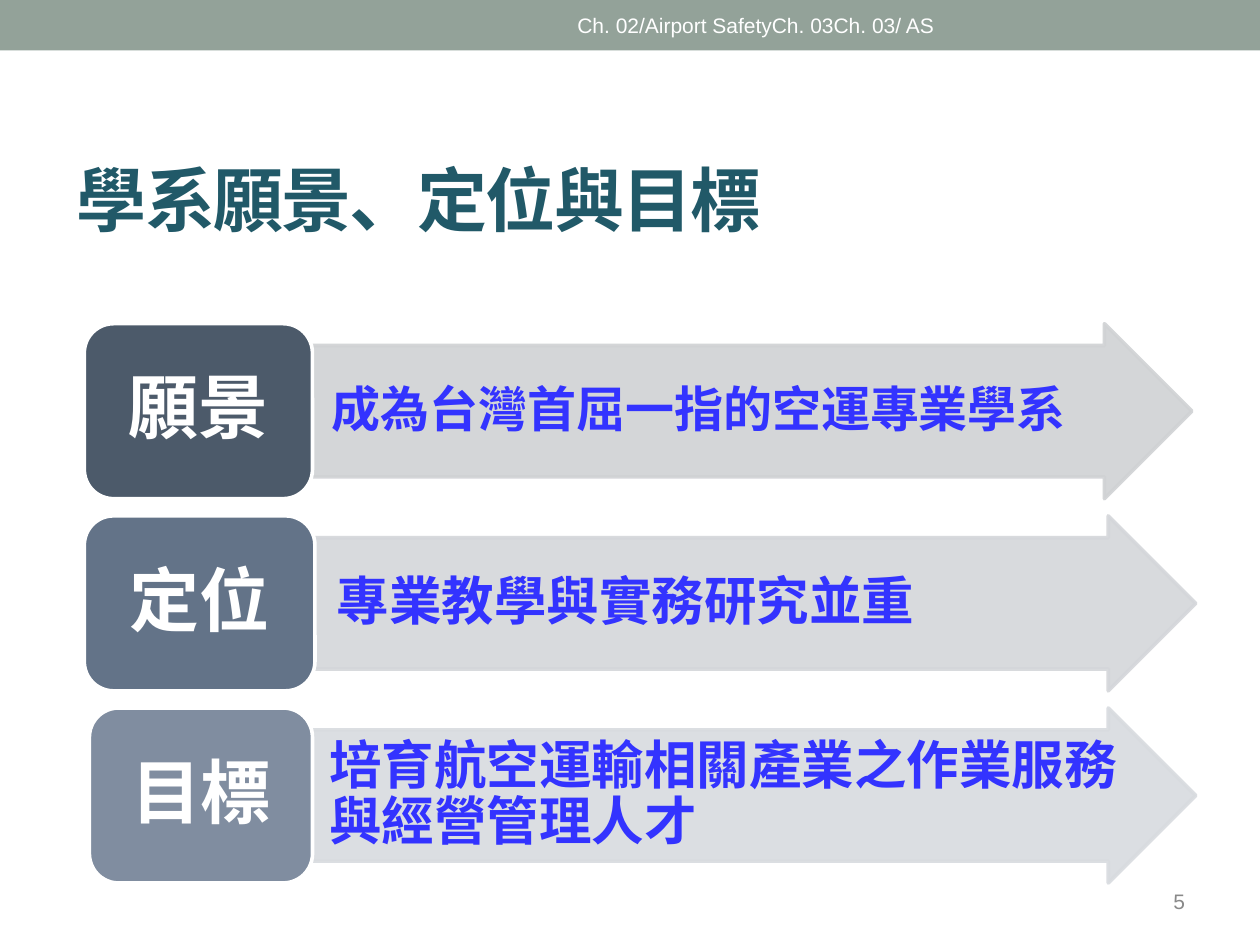
from dataclasses import dataclass

from lxml.etree import SubElement
from pptx import Presentation
from pptx.dml.color import RGBColor
from pptx.enum.shapes import MSO_SHAPE
from pptx.enum.text import MSO_ANCHOR, MSO_AUTO_SIZE, PP_ALIGN
from pptx.oxml.ns import qn
from pptx.util import Pt

LATIN_FONT = "Arial"
CHINESE_FONT = "Noto Sans CJK SC"
WHITE = "FFFFFF"
ROW_TOP, ROW_PITCH, ROW_HEIGHT = 185, 109.8, 100


@dataclass
class Row:
    label: str
    label_left: float
    label_right: float
    label_color: str
    statement: str
    statement_size: float
    arrow_left: float
    arrow_right: float
    arrow_color: str


ROWS = [
    Row("願景", 48.2, 178.6, "4C5A6A",
        "成為台灣首屈一指的空運專業學系", 28, 165.6, 681.1, "D0D2D4"),
    Row("定位", 48.2, 180, "637388",
        "專業教學與實務研究並重", 30, 168.5, 683.3, "D4D6DA"),
    Row("目標", 51.1, 178.6, "808DA0",
        "培育航空運輸相關產業之作業服務與經營管理人才", 30, 164.2, 683.3, "D8DBDF"),
]


def rgb(color: str) -> RGBColor:
    return RGBColor.from_string(color)


def write(box, text: str, size: float, color: str, align: PP_ALIGN,
          font: str = CHINESE_FONT, bold: bool = True,
          insets: tuple = (7.2, 3.6, 7.2, 3.6)):
    """Put one formatted paragraph into a shape; insets are left, top, right, bottom."""
    frame = box.text_frame
    frame.word_wrap = True
    frame.auto_size = MSO_AUTO_SIZE.NONE
    frame.vertical_anchor = MSO_ANCHOR.MIDDLE
    (frame.margin_left, frame.margin_top,
     frame.margin_right, frame.margin_bottom) = map(Pt, insets)
    para = frame.paragraphs[0]
    para.alignment = align
    span = para.add_run()
    span.text = text
    span.font.size = Pt(size)
    span.font.bold = bold
    span.font.name = font
    span.font.color.rgb = rgb(color)
    SubElement(span.font._element, qn("a:ea"), typeface=font)
    return para


def add_block(page, kind: MSO_SHAPE, left: float, top: float, width: float,
              height: float, fill: str, line: str | None = None):
    block = page.shapes.add_shape(kind, Pt(left), Pt(top), Pt(width), Pt(height))
    block.shadow.inherit = False
    block.fill.solid()
    block.fill.fore_color.rgb = rgb(fill)
    if line:
        block.line.color.rgb = rgb(line)
        block.line.width = Pt(2.08)
    else:
        block.line.fill.background()
    return block


def add_caption(page, left: float, top: float, width: float, height: float,
                text: str, color: str, align: PP_ALIGN) -> None:
    box = page.shapes.add_textbox(Pt(left), Pt(top), Pt(width), Pt(height))
    write(box, text, 12, color, align, LATIN_FONT, bold=False)


def add_row(page, row: Row, top: float) -> None:
    arrow = add_block(page, MSO_SHAPE.RIGHT_ARROW, row.arrow_left, top,
                      row.arrow_right - row.arrow_left, ROW_HEIGHT,
                      row.arrow_color, row.arrow_color)
    arrow.adjustments[0] = 0.75
    arrow.adjustments[1] = 0.5
    for color in arrow._element.spPr.iter(qn("a:srgbClr")):
        SubElement(color, qn("a:alpha"), val="90000")
    para = write(arrow, row.statement, row.statement_size, "3333FF",
                 PP_ALIGN.LEFT, insets=(24, 1.4, 0, 1.4))
    para.line_spacing = 0.9

    label = add_block(page, MSO_SHAPE.ROUNDED_RECTANGLE, row.label_left, top,
                      row.label_right - row.label_left, ROW_HEIGHT,
                      row.label_color, WHITE)
    para = write(label, row.label, 40, WHITE, PP_ALIGN.CENTER,
                 insets=(12, 6, 12, 6))
    para.line_spacing = 0.9


def main() -> None:
    deck = Presentation()
    deck.slide_width, deck.slide_height = Pt(720), Pt(540)
    page = deck.slides.add_slide(deck.slide_layouts.get_by_name("Title Only"))

    add_block(page, MSO_SHAPE.RECTANGLE, 0, 0, 720, 28.8, "93A299")
    add_caption(page, 270, 1.4, 324, 26, "Ch. 02/Airport SafetyCh. 03Ch. 03/ AS",
                WHITE, PP_ALIGN.CENTER)

    title = page.shapes.title
    title.left, title.top, title.width, title.height = map(Pt, (36.7, 71.3, 648, 84.2))
    para = write(title, "學系願景、定位與目標", 40, "215968", PP_ALIGN.LEFT)
    para.runs[0].font._element.set("spc", "-100")

    add_caption(page, 516.2, 500.4, 168, 28.8, "5", "898989", PP_ALIGN.RIGHT)
    for index, row in enumerate(ROWS):
        add_row(page, row, ROW_TOP + index * ROW_PITCH)

    deck.save("out.pptx")


if __name__ == "__main__":
    main()
